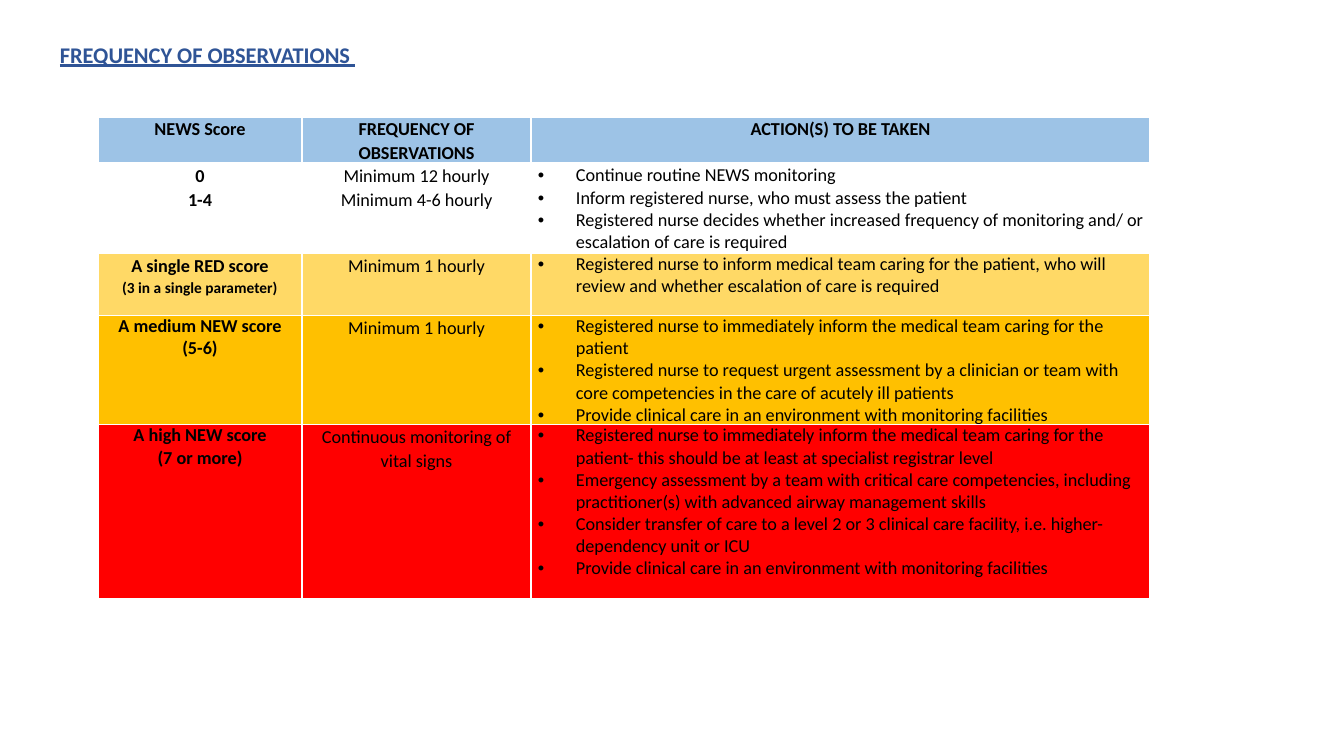
from dataclasses import dataclass

from lxml.etree import SubElement
from pptx import Presentation
from pptx.dml.color import RGBColor as RGB
from pptx.enum.text import MSO_ANCHOR as Anchor, PP_ALIGN as Align
from pptx.oxml import parse_xml
from pptx.oxml.ns import nsdecls, qn
from pptx.util import Emu, Pt

TITLE = "FREQUENCY OF OBSERVATIONS "
HEAD = ["NEWS Score", "FREQUENCY OF OBSERVATIONS", "ACTION(S) TO BE TAKEN"]
# fill, height, score paragraphs, small note under the score, frequency, actions
ROWS = [
    ("none", 22, ["0"], "", "Minimum 12 hourly", ["Continue routine NEWS monitoring"]),
    ("none", 66, ["1-4"], "", "Minimum 4-6 hourly", [
        "Inform registered nurse, who must assess the patient",
        "Registered nurse decides whether increased frequency of monitoring and/ or "
        "escalation of care is required"]),
    ("single", 62, ["A single RED score"], "(3 in a single parameter)", "Minimum 1 hourly", [
        "Registered nurse to inform medical team caring for the patient, who will "
        "review and whether escalation of care is required"]),
    ("medium", 109, ["A medium NEW score", "(5-6)"], "", "Minimum 1 hourly", [
        "Registered nurse to immediately inform the medical team caring for the patient",
        "Registered nurse to request urgent assessment by a clinician or team with "
        "core competencies in the care of acutely ill patients",
        "Provide clinical care in an environment with monitoring facilities"]),
    ("high", 174, ["A high NEW score", "(7 or more)"], "", "Continuous monitoring of vital signs", [
        "Registered nurse to immediately inform the medical team caring for the "
        "patient- this should be at least at specialist registrar level",
        "Emergency assessment by a team with critical care competencies, including "
        "practitioner(s) with advanced airway management skills",
        "Consider transfer of care to a level 2 or 3 clinical care facility, i.e. "
        "higher-dependency unit or ICU",
        "Provide clinical care in an environment with monitoring facilities"]),
]
COLS = [204, 229, 619]
TOP = 45
LEFT, UPPER = 98, 117
INDENT, INSET = 38, 7


@dataclass(frozen=True)
class Theme:
    font: str = "Calibri"
    title: str = "2F5496"
    ink: str = "000000"
    line: str = "FFFFFF"
    head: str = "9DC3E6"
    none: str = "FFFFFF"
    single: str = "FFD966"
    medium: str = "FFC000"
    high: str = "FF0000"
    big: int = 16
    body: int = 13
    note: int = 11


THEME = Theme()


def px(n):
    return Emu(round(n * 914400 / 100.8))


def write(para, text, size=THEME.body, bold=False, color=THEME.ink):
    run = para.add_run()
    run.text = text
    font = run.font
    font.name, font.size, font.bold = THEME.font, Pt(size), bold
    font.color.rgb = RGB.from_string(color)
    return run


def loosen(para):
    para.line_spacing, para.space_after = 1.07, Pt(8)


def bullet(para):
    props = para._p.get_or_add_pPr()
    props.set("marL", str(px(INDENT)))
    props.set("indent", str(-px(INDENT)))
    SubElement(props, qn("a:buFont")).set("typeface", "Arial")
    SubElement(props, qn("a:buChar")).set("char", "•")


def dress(cell, fill, under=1):
    """Set the fill, insets and borders of a cell."""
    cell.margin_left = cell.margin_right = px(INSET)
    cell.margin_top = cell.margin_bottom = 0
    cell.vertical_anchor = Anchor.TOP
    cell.fill.solid()
    cell.fill.fore_color.rgb = RGB.from_string(fill)
    props = cell._tc.get_or_add_tcPr()
    for i, (side, width) in enumerate(zip("LRTB", (1, 1, 1, under))):
        props.insert(i, parse_xml(
            f'<a:ln{side} {nsdecls("a")} w="{Pt(width)}"><a:solidFill>'
            f'<a:srgbClr val="{THEME.line}"/></a:solidFill></a:ln{side}>'))


def fill_text(cell, texts, bold=False, listed=False):
    """Write one paragraph per text; a lone centred one gets loose spacing."""
    frame = cell.text_frame
    for i, text in enumerate(texts):
        para = frame.add_paragraph() if i else frame.paragraphs[0]
        if listed:
            bullet(para)
        else:
            para.alignment = Align.CENTER
            if len(texts) == 1:
                loosen(para)
        write(para, text, bold=bold)
    return para


def add_title(slide):
    box = slide.shapes.add_textbox(px(50), px(34), px(320), px(38))
    box.text_frame.word_wrap = False
    para = box.text_frame.paragraphs[0]
    loosen(para)
    write(para, TITLE, THEME.big, True, THEME.title).font.underline = True


def add_grid(slide):
    tall = [TOP] + [row[1] for row in ROWS]
    grid = slide.shapes.add_table(len(tall), len(COLS), px(LEFT), px(UPPER),
                                  px(sum(COLS)), px(sum(tall))).table
    grid.first_row = grid.horz_banding = False
    for col, wide in zip(grid.columns, COLS):
        col.width = px(wide)
    for row, high in zip(grid.rows, tall):
        row.height = px(high)
    for cell, text in zip(grid.rows[0].cells, HEAD):
        dress(cell, THEME.head, under=3)
        fill_text(cell, [text], bold=True)
    for i, (level, _, score, note, often, acts) in enumerate(ROWS, 1):
        cells = list(grid.rows[i].cells)
        for cell in cells:
            dress(cell, getattr(THEME, level))
        para = fill_text(cells[0], score, bold=True)
        if note:
            para.add_line_break()
            write(para, note, THEME.note, True)
        fill_text(cells[1], [often])
        fill_text(cells[2], acts, listed=True)


def main():
    deck = Presentation()
    deck.slide_width, deck.slide_height = px(1344), px(756)
    slide = deck.slides.add_slide(deck.slide_layouts[6])
    add_title(slide)
    add_grid(slide)
    deck.save("out.pptx")


if __name__ == "__main__":
    main()
